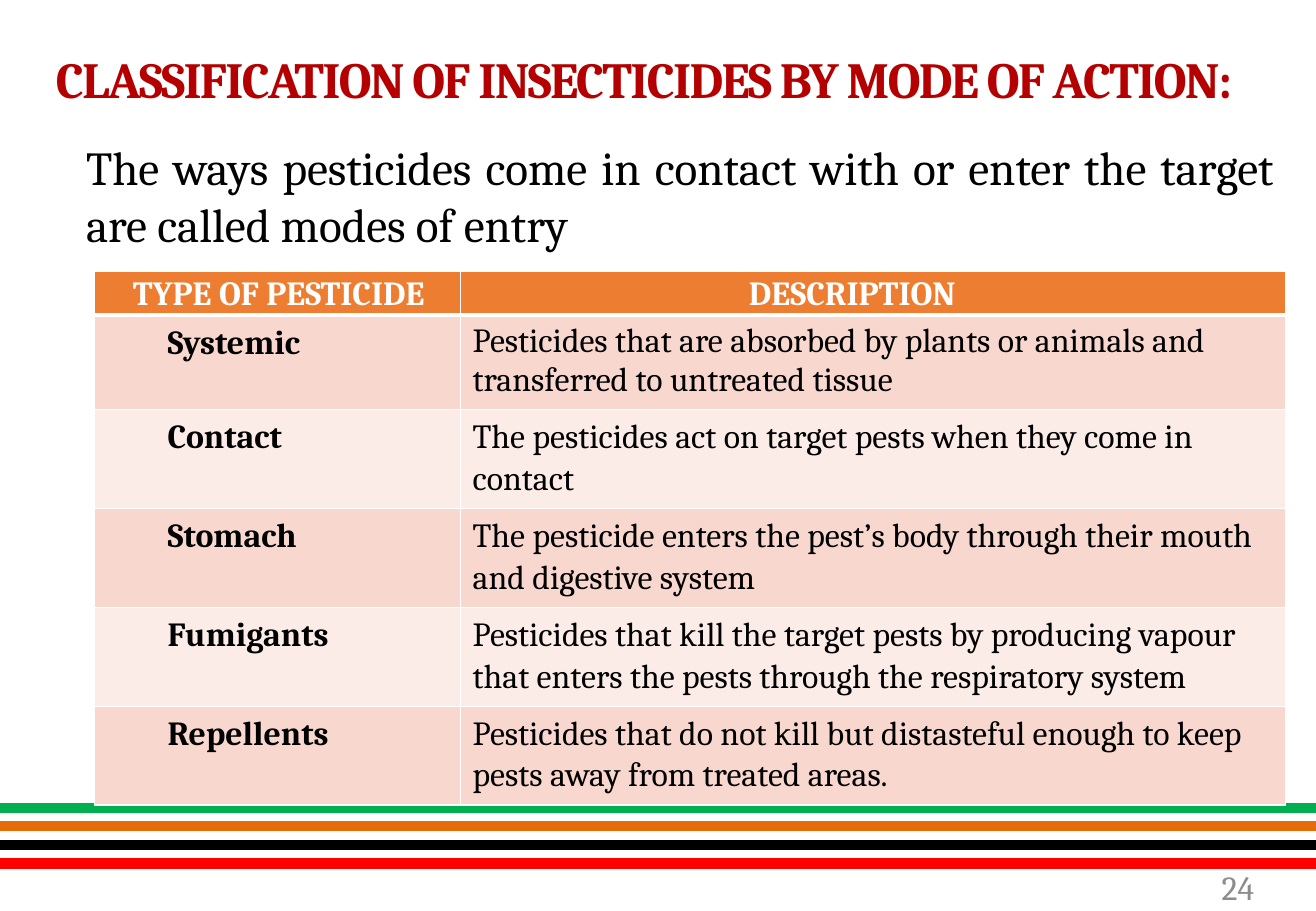
import pptx
import pptx.util
import pptx.dml.color
import pptx.enum.shapes
import pptx.enum.text
from lxml import etree

Inches, Pt = pptx.util.Inches, pptx.util.Pt
ALIGN, ANCHOR = pptx.enum.text.PP_ALIGN, pptx.enum.text.MSO_ANCHOR

HEADING = "CLASSIFICATION OF INSECTICIDES BY MODE OF ACTION:"
INTRO = "The ways pesticides come in contact with or enter the target are called modes of entry"
PAGE_NUMBER = "24"
HEADERS = ("TYPE OF PESTICIDE", "DESCRIPTION")
PESTICIDES = [
    ("Systemic", "Pesticides that are absorbed by plants or animals and transferred to untreated tissue"),
    ("Contact", "The pesticides act on target pests when they come in contact"),
    ("Stomach", "The pesticide enters the pest’s body through their mouth and digestive system"),
    ("Fumigants", "Pesticides that kill the target pests by producing vapour that enters the pests "
                  "through the respiratory system"),
    ("Repellents", "Pesticides that do not kill but distasteful enough to keep pests away from treated areas."),
]
THEME = {
    "font": "Cambria",
    "heading": "B40000", "text": "000000", "page": "8C8C8C", "white": "FFFFFF",
    "header_fill": "ED7D31", "bands": ("F8D7CE", "FCECE8"),
    "stripes": ("00B050", "E46C0A", "000000", "FF0000"),
    "heading_size": 30, "intro_size": 28, "table_size": 20, "page_size": 20,
}
SLIDE_WIDTH, SLIDE_HEIGHT = 10.83, 7.5
COLUMN_WIDTHS = (3.01, 6.79)
ROW_HEIGHTS = (0.34, 0.75, 0.78, 0.78, 0.78, 0.78)
STRIPE_TOP, STRIPE_STEP = 6.65, 0.153


def rgb(value):
    """Return a colour object for a hex value."""
    return pptx.dml.color.RGBColor.from_string(value)


def write(frame, text, size, color="text", bold=False, align=ALIGN.LEFT,
          anchor=ANCHOR.TOP, line=1.0, after=0, indent=0, tracking=0):
    """Put one formatted paragraph in a text frame."""
    frame.word_wrap = True
    frame.vertical_anchor = anchor
    paragraph = frame.paragraphs[0]
    paragraph.alignment = align
    paragraph.line_spacing = line
    paragraph.space_after = Pt(after)
    if indent:
        properties = paragraph._p.get_or_add_pPr()
        properties.set("marL", str(Inches(indent)))
        properties.set("indent", "0")
    run = paragraph.add_run()
    run.text = text
    run.font.name = THEME["font"]
    run.font.size = Pt(THEME[size])
    run.font.bold = bold
    run.font.color.rgb = rgb(THEME[color])
    if tracking:
        run.font._element.set("spc", str(tracking * 100))


def add_borders(cell, widths):
    """Draw white borders on the sides of a cell."""
    properties = cell._tc.get_or_add_tcPr()
    for side, width in widths.items():
        border = etree.SubElement(properties, pptx.oxml.ns.qn(f"a:ln{side}"), w=str(Pt(width)))
        fill = etree.SubElement(border, pptx.oxml.ns.qn("a:solidFill"))
        etree.SubElement(fill, pptx.oxml.ns.qn("a:srgbClr"), val=THEME["white"])


def add_stripes(slide):
    """Draw the coloured stripes across the foot of the slide."""
    for index, color in enumerate(THEME["stripes"]):
        y = Inches(STRIPE_TOP + index * STRIPE_STEP)
        stripe = slide.shapes.add_connector(
            pptx.enum.shapes.MSO_CONNECTOR.STRAIGHT, Inches(SLIDE_WIDTH), y, 0, y)
        stripe.line.color.rgb = rgb(color)
        stripe.line.width = Pt(6)
        etree.SubElement(stripe._element.spPr, pptx.oxml.ns.qn("a:effectLst"))


def add_pesticides(slide):
    """Build the table of pesticide types."""
    rows = [HEADERS, *PESTICIDES]
    table = slide.shapes.add_table(
        len(rows), len(HEADERS), Inches(0.78), Inches(2.23),
        Inches(sum(COLUMN_WIDTHS)), Inches(sum(ROW_HEIGHTS))).table
    for column, width in zip(table.columns, COLUMN_WIDTHS):
        column.width = Inches(width)
    for row, height in zip(table.rows, ROW_HEIGHTS):
        row.height = Inches(height)
    for r, row in enumerate(rows):
        for c, text in enumerate(row):
            cell = table.cell(r, c)
            add_borders(cell, {"L": 1, "R": 1, "T": 3 if r == 1 else 1, "B": 1 if r else 3})
            cell.fill.solid()
            if r == 0:
                cell.fill.fore_color.rgb = rgb(THEME["header_fill"])
                cell.margin_top, cell.margin_bottom = Inches(0.01), 0
                cell.margin_right = Inches(0.44 if c else 0.08)
                cell.vertical_anchor = ANCHOR.MIDDLE
                write(cell.text_frame, text, "table_size", color="white", bold=True,
                      align=ALIGN.CENTER, anchor=None, line=1.06, after=8)
            else:
                cell.fill.fore_color.rgb = rgb(THEME["bands"][(r - 1) % 2])
                tight = r == 1 and c == 1
                write(cell.text_frame, text, "table_size", bold=c == 0, anchor=None,
                      line=1.02 if tight else 1.07, after=1.3 if tight else 8,
                      indent=0 if c else 0.5)


def main():
    """Build the slide and save it."""
    deck = pptx.Presentation()
    deck.slide_width, deck.slide_height = Inches(SLIDE_WIDTH), Inches(SLIDE_HEIGHT)
    slide = deck.slides.add_slide(deck.slide_layouts[5])
    add_stripes(slide)

    heading = slide.shapes.title
    heading.left, heading.top = Inches(0.36), Inches(0.4)
    heading.width, heading.height = Inches(10.22), Inches(0.6)
    heading.text_frame.auto_size = pptx.enum.text.MSO_AUTO_SIZE.NONE
    write(heading.text_frame, HEADING, "heading_size", color="heading", bold=True,
          align=ALIGN.JUSTIFY, line=0.9, tracking=-1)

    intro = slide.shapes.add_textbox(Inches(0.61), Inches(1.09), Inches(9.97), Inches(1.05))
    write(intro.text_frame, INTRO, "intro_size", align=ALIGN.JUSTIFY)

    page = slide.shapes.add_textbox(Inches(7.98), Inches(7.1), Inches(2.44), Inches(0.4))
    write(page.text_frame, PAGE_NUMBER, "page_size", color="page",
          align=ALIGN.RIGHT, anchor=ANCHOR.MIDDLE)

    add_pesticides(slide)
    deck.save("out.pptx")


if __name__ == "__main__":
    main()
